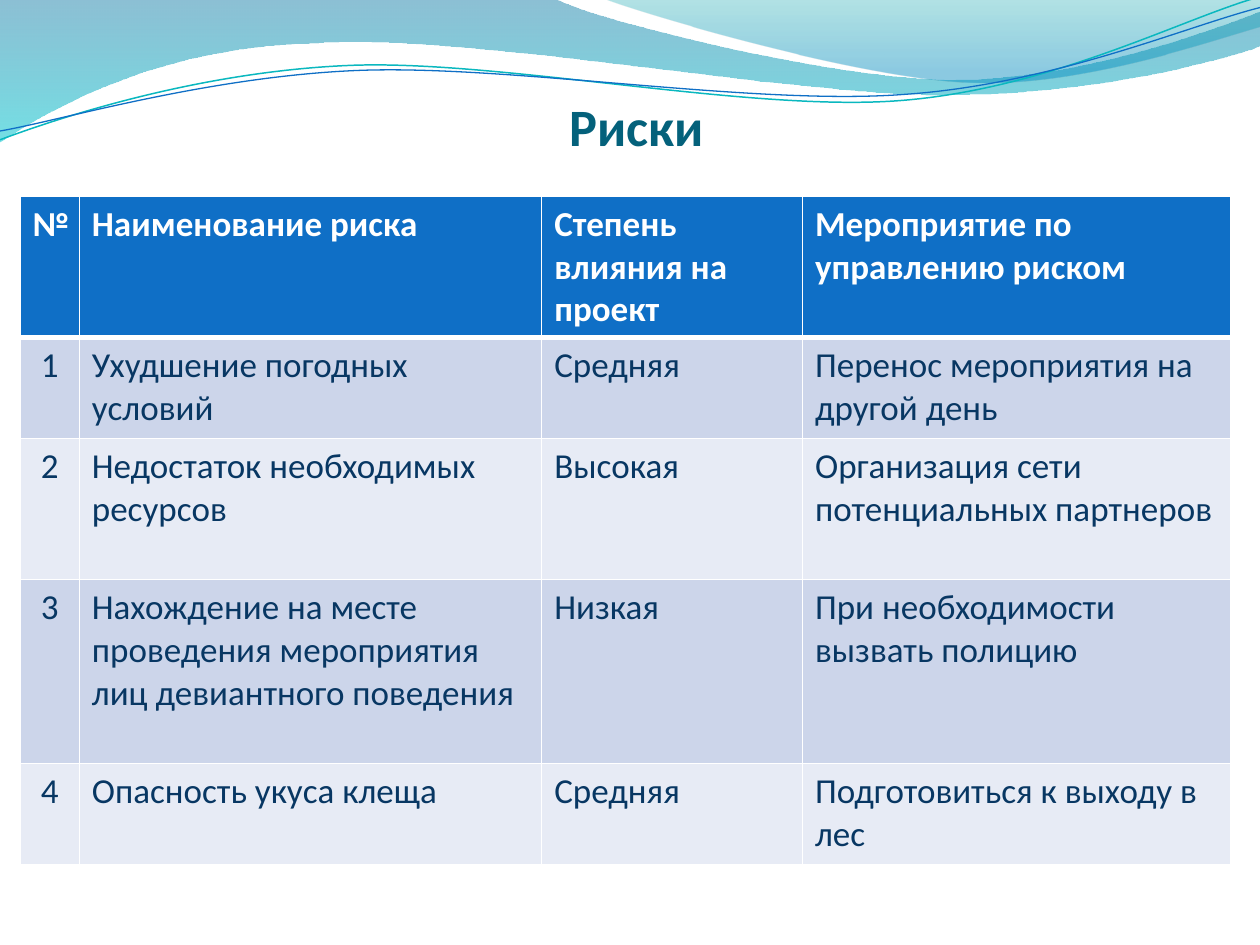
from dataclasses import dataclass

from lxml.etree import SubElement
from pptx import Presentation
from pptx.dml.color import RGBColor
from pptx.enum.text import MSO_ANCHOR, MSO_AUTO_SIZE, PP_ALIGN
from pptx.oxml import parse_xml
from pptx.oxml.ns import nsdecls, qn
from pptx.util import Inches, Pt


@dataclass(frozen=True)
class Theme:
    font: str = "Calibri"
    title_size: int = 30
    table_size: int = 20
    title: str = "04617B"
    header: str = "0F6FC6"
    header_text: str = "FFFFFF"
    rule: str = "FFFFFF"
    text: str = "083763"
    bands: tuple = ("CCD5EA", "E7EBF5")
    wide_wave: tuple = ((0, "0074A1", 45), (1, "00C6CF", 55))
    right_wave: tuple = ((0, "00A1A9", 30), (0.8, "008BBF", 45))
    teal_line: str = "0AB8BF"
    blue_line: str = "0F6FC6"


THEME = Theme()

WIDE_WAVE = [
    (0, 0), (4.4, -0.01),
    (4.76, 0.17, 6.64, 0.63, 7.58, 0.63), (8.53, 0.63, 9.58, 0.26, 10, 0.09),
    (10.01, 0.36),
    (9.83, 0.44, 8.7, 0.76, 7.46, 0.75), (6.22, 0.75, 3.82, 0.28, 2.57, 0.34),
    (1.29, 0.36, 0.46, 0.83, -0.01, 1.13),
]
RIGHT_WAVE = [
    (4.79, -0.01),
    (5.09, 0.11, 6.82, 0.62, 7.69, 0.65), (8.56, 0.69, 9.61, 0.32, 10, 0.21),
    (10, 0),
]
TEAL_LINE = [
    (0, 1.11),
    (0.48, 0.93, 1.58, 0.57, 2.77, 0.52), (3.95, 0.47, 5.93, 0.89, 7.13, 0.8),
    (8.33, 0.71, 9.38, 0.15, 9.98, -0.02),
]
BLUE_LINE = [
    (0, 1.04),
    (0.47, 0.96, 1.64, 0.61, 2.83, 0.56), (4.03, 0.51, 5.97, 0.84, 7.17, 0.75),
    (8.36, 0.67, 9.41, 0.21, 10, 0.06),
]

COLUMNS = [0.47, 3.67, 2.07, 3.4]
ROWS = [1.11, 0.8, 1.12, 1.46, 0.8]
RISKS = [
    ("№", "Наименование риска", "Степень влияния на проект",
     "Мероприятие по управлению риском"),
    ("1", "Ухудшение погодных условий", "Средняя",
     "Перенос мероприятия на другой день"),
    ("2", "Недостаток необходимых ресурсов", "Высокая",
     "Организация сети потенциальных партнеров"),
    ("3", "Нахождение на месте проведения мероприятия лиц девиантного поведения",
     "Низкая", "При необходимости\nвызвать полицию"),
    ("4", "Опасность укуса клеща", "Средняя", "Подготовиться к выходу в лес"),
]


def rgb(value):
    return RGBColor.from_string(value)


def set_font(p, size, color, bold):
    p.font.name = THEME.font
    p.font.size = Pt(size)
    p.font.bold = bold
    p.font.color.rgb = rgb(color)


def add_outline(s, box, segments, close):
    left, top = box[:2]
    points = [(left + Inches(x), top + Inches(y))
              for segment in segments
              for x, y in zip(segment[::2], segment[1::2])]
    builder = s.shapes.build_freeform(*points[0], scale=1.0)
    builder.add_line_segments(points[1:], close=close)
    sp = builder.convert_to_shape()
    sp.shadow.inherit = False
    lines = iter(list(sp._element.iter(qn("a:lnTo"))))
    for segment in segments[1:]:
        line = next(lines)
        if len(segment) == 6:
            line.tag = qn("a:cubicBezTo")
            for _ in range(2):
                extra = next(lines)
                line.append(extra[0])
                extra.getparent().remove(extra)
    return sp


def add_wave(s, box, segments, stops):
    sp = add_outline(s, box, segments, True)
    sp.line.fill.background()
    sp.fill.gradient()
    sp.fill.gradient_angle = 270
    for stop, (position, color, _) in zip(sp.fill.gradient_stops, stops):
        stop.position = position
        stop.color.rgb = rgb(color)
    for clr, (_, _, opacity) in zip(sp._element.spPr.iter(qn("a:srgbClr")), stops):
        SubElement(clr, qn("a:alpha")).set("val", str(opacity * 1000))


def add_wave_line(s, box, segments, color, width):
    sp = add_outline(s, box, segments, False)
    sp.fill.background()
    sp.line.color.rgb = rgb(color)
    sp.line.width = Pt(width)


def add_header_waves(s, box):
    add_wave(s, box, WIDE_WAVE, THEME.wide_wave)
    add_wave(s, box, RIGHT_WAVE, THEME.right_wave)
    add_wave_line(s, box, TEAL_LINE, THEME.teal_line, 0.85)
    add_wave_line(s, box, BLUE_LINE, THEME.blue_line, 0.75)


def add_title(s, box, text):
    title = s.shapes.title
    title.left, title.top, title.width, title.height = box
    s.shapes._spTree.append(title._element)
    tf = title.text_frame
    tf.text = text
    tf.word_wrap = True
    tf.auto_size = MSO_AUTO_SIZE.NONE
    tf.vertical_anchor = MSO_ANCHOR.BOTTOM
    tf.margin_left = tf.margin_right = tf.margin_bottom = 0
    p = tf.paragraphs[0]
    p.alignment = PP_ALIGN.CENTER
    set_font(p, THEME.title_size, THEME.title, True)


def set_borders(cell, bottom_width):
    widths = {"lnL": 1, "lnR": 1, "lnT": 1, "lnB": bottom_width}
    for i, (side, width) in enumerate(widths.items()):
        cell._tc.get_or_add_tcPr().insert(i, parse_xml(
            f'<a:{side} {nsdecls("a")} w="{Pt(width)}"><a:solidFill>'
            f'<a:srgbClr val="{THEME.rule}"/></a:solidFill></a:{side}>'))


def add_risk_table(s, box):
    table = s.shapes.add_table(len(ROWS), len(COLUMNS), *box).table
    for column, width in zip(table.columns, COLUMNS):
        column.width = Inches(width)
    for i, (row, height, texts) in enumerate(zip(table.rows, ROWS, RISKS)):
        row.height = Inches(height)
        header = i == 0
        for j, (cell, text) in enumerate(zip(row.cells, texts)):
            cell.text = text
            cell.fill.solid()
            cell.fill.fore_color.rgb = rgb(
                THEME.header if header else THEME.bands[(i - 1) % 2])
            if header:
                set_borders(cell, 3)
            for p in cell.text_frame.paragraphs:
                set_font(p, THEME.table_size,
                         THEME.header_text if header else THEME.text, header)
                if j == 0 and not header:
                    p.alignment = PP_ALIGN.CENTER


def main():
    prs = Presentation()
    prs.slide_width, prs.slide_height = Inches(10), Inches(7.5)
    s = prs.slides.add_slide(prs.slide_layouts[5])
    add_header_waves(s, (0, 0, prs.slide_width, Inches(1.13)))
    add_title(s, (Inches(0.55), Inches(0.47), Inches(9), Inches(0.78)), "Риски")
    add_risk_table(s, (Inches(0.16), Inches(1.56),
                       Inches(sum(COLUMNS)), Inches(sum(ROWS))))
    prs.save("out.pptx")


if __name__ == "__main__":
    main()
